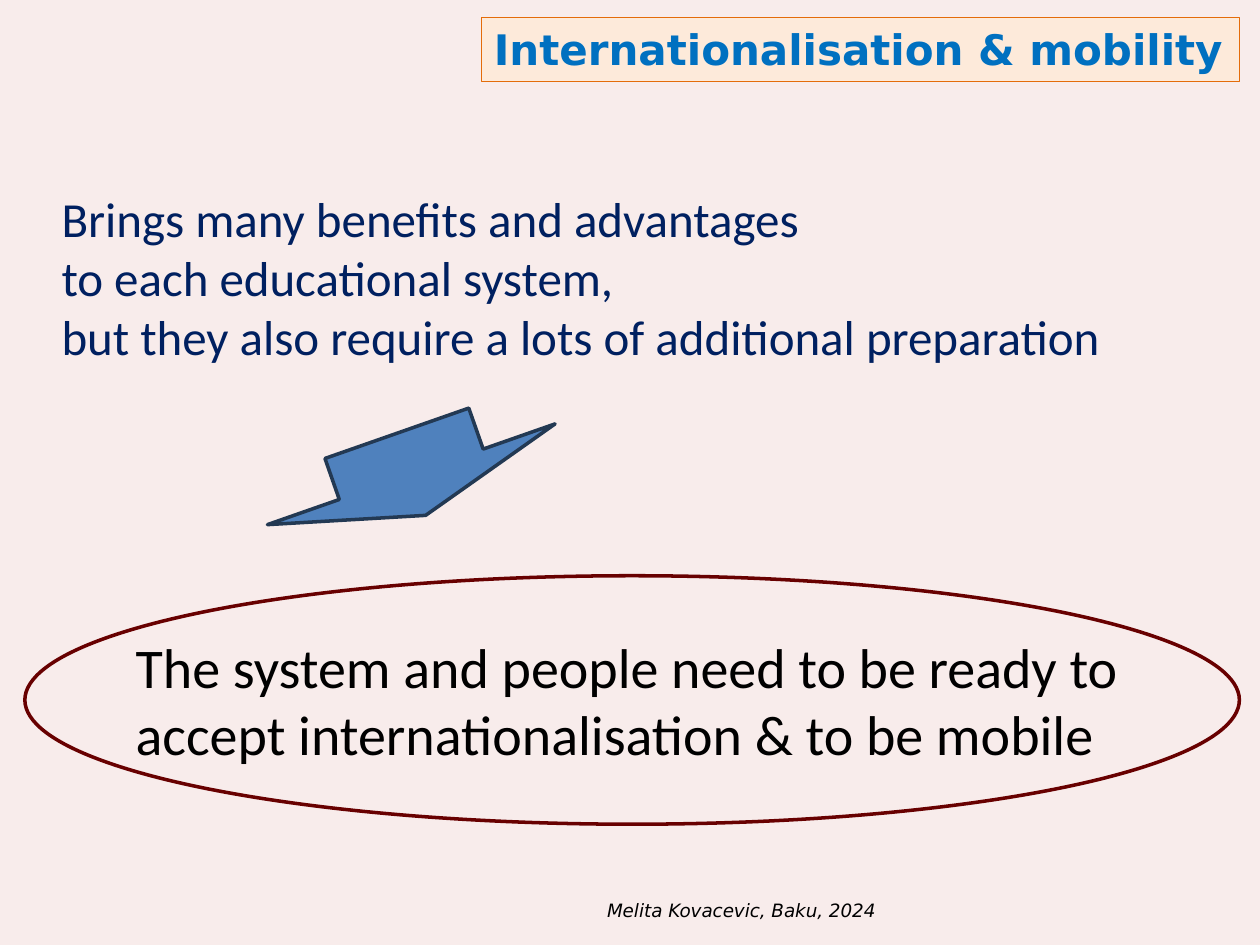
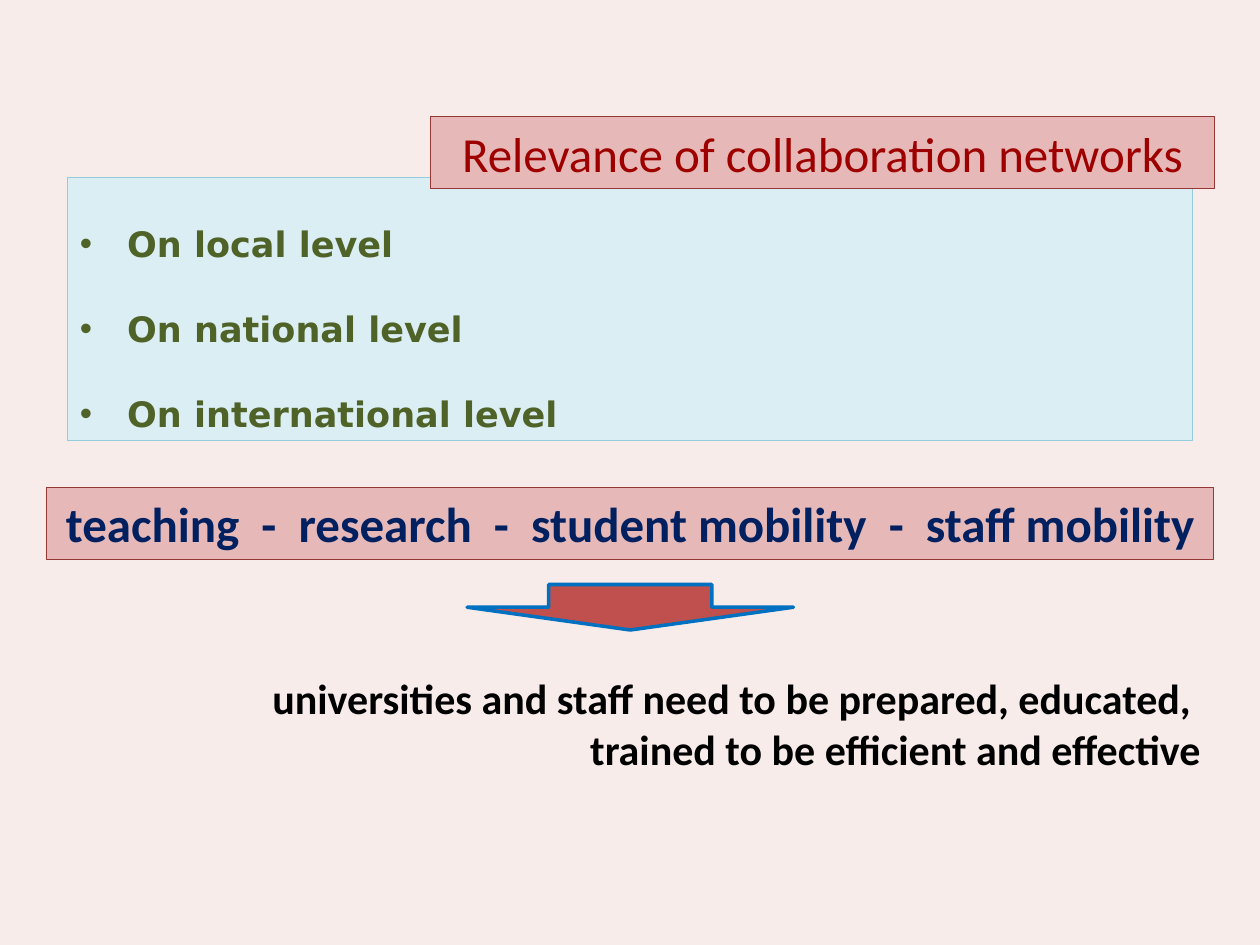
from dataclasses import dataclass

from lxml.etree import SubElement
from pptx import Presentation
from pptx.dml.color import RGBColor
from pptx.enum.shapes import MSO_SHAPE
from pptx.enum.text import MSO_ANCHOR, MSO_AUTO_SIZE, PP_ALIGN
from pptx.oxml.ns import qn
from pptx.util import Pt


@dataclass(frozen=True)
class Theme:
    # Fonts
    body_font: str = "Calibri"
    accent_font: str = "DejaVu Sans"
    # Colours
    background: str = "F8ECEB"
    navy: str = "002060"
    blue: str = "0070C0"
    black: str = "000000"
    dark_red: str = "9E0000"
    maroon: str = "680000"
    green: str = "4F6228"
    cream: str = "FDEADA"
    orange: str = "E46C0A"
    rose: str = "E6B9B8"
    rose_line: str = "953735"
    ice: str = "DBEEF4"
    ice_line: str = "93CDDD"
    arrow_blue: str = "4F81BD"
    arrow_blue_line: str = "233953"
    arrow_red: str = "C0504D"
    # Type sizes and line widths
    statement_size: float = 32
    lead_size: float = 28
    strong_size: float = 24
    bullet_size: float = 20
    footer_size: float = 10.5
    thin: float = 0.75
    thick: float = 2


THEME = Theme()


def color(value):
    return RGBColor.from_string(value)


def place(shape, box):
    shape.left, shape.top, shape.width, shape.height = (Pt(value) for value in box)


def paint(shape, fill, line, width):
    if fill:
        shape.fill.solid()
        shape.fill.fore_color.rgb = color(fill)
    else:
        shape.fill.background()
    shape.line.color.rgb = color(line)
    shape.line.width = Pt(width)


def write(shape, lines, size, text_color, font=THEME.body_font, bold=False,
          italic=False, align=PP_ALIGN.LEFT, wrap=True):
    frame = shape.text_frame
    frame.text = "\n".join(lines)
    frame.word_wrap = wrap
    frame.auto_size = MSO_AUTO_SIZE.NONE
    frame.vertical_anchor = MSO_ANCHOR.TOP
    for paragraph in frame.paragraphs:
        paragraph.alignment = align
        for run in paragraph.runs:
            run.font.name = font
            run.font.size = Pt(size)
            run.font.bold = bold
            run.font.italic = italic
            run.font.color.rgb = color(text_color)


def add_preset(slide, preset, box, fill, line, width):
    shape = slide.shapes.add_shape(preset, *(Pt(value) for value in box))
    shape.shadow.inherit = False
    paint(shape, fill, line, width)
    return shape


def add_text(slide, box, lines, size, text_color, **style):
    text_box = slide.shapes.add_textbox(*(Pt(value) for value in box))
    write(text_box, lines, size, text_color, **style)


def add_title(slide, box, text, fill, line, size, text_color, **style):
    title = slide.shapes.title
    place(title, box)
    paint(title, fill, line, THEME.thin)
    write(title, [text], size, text_color, **style)
    # Bring the title in front of what is already on the slide
    title.element.getparent().append(title.element)


def add_bullet(paragraph, indent):
    properties = paragraph._p.get_or_add_pPr()
    properties.set("marL", str(Pt(indent)))
    properties.set("indent", str(Pt(-indent)))
    SubElement(properties, qn("a:buFont")).set("typeface", "Arial")
    SubElement(properties, qn("a:buChar")).set("char", "•")


def add_level_panel(slide, box, levels):
    panel = add_preset(slide, MSO_SHAPE.RECTANGLE, box, THEME.ice, THEME.ice_line, THEME.thin)
    write(panel, levels, THEME.bullet_size, THEME.green,
          font=THEME.accent_font, bold=True)
    panel.text_frame.margin_top = Pt(25.6)
    for index, paragraph in enumerate(panel.text_frame.paragraphs):
        paragraph.space_before = Pt(24.6 if index else 0)
        add_bullet(paragraph, 27)


def add_ringed_statement(slide, box, text):
    left, top, width, height = box
    add_preset(slide, MSO_SHAPE.OVAL, box, None, THEME.maroon, THEME.thick)
    add_text(slide, (left + 56.2, top + 28.8, width - 28.8, height - 57), [text],
             THEME.statement_size, THEME.black)


def add_slide(presentation):
    slide = presentation.slides.add_slide(presentation.slide_layouts[5])
    slide.background.fill.solid()
    slide.background.fill.fore_color.rgb = color(THEME.background)
    return slide


def build_mobility_slide(presentation):
    slide = add_slide(presentation)
    add_title(slide, (275, 10, 433.5, 36.4), "Internationalisation & mobility",
              THEME.cream, THEME.orange, THEME.strong_size, THEME.blue,
              font=THEME.accent_font, bold=True)
    # Benefits and their cost
    add_text(slide, (28.1, 104.4, 665.3, 108.7),
             ["Brings many benefits and advantages",
              "to each educational system,",
              "but they also require a lots of additional preparation"],
             THEME.lead_size, THEME.navy)
    # Conclusion
    add_ringed_statement(slide, (14.2, 329, 694, 142),
                         "The system and people need to be ready to accept "
                         "internationalisation & to be mobile")
    arrow = add_preset(slide, MSO_SHAPE.DOWN_ARROW, (147.9, 246.2, 174.2, 49.7),
                       THEME.arrow_blue, THEME.arrow_blue_line, THEME.thick)
    arrow.rotation = 340.7
    # Footer
    add_text(slide, (339.8, 510.5, 171.4, 29.5), ["Melita Kovacevic, Baku, 2024"],
             THEME.footer_size, THEME.black, font=THEME.accent_font,
             italic=True, wrap=False)


def build_networks_slide(presentation):
    slide = add_slide(presentation)
    # Levels, overlapped by the title
    add_level_panel(slide, (38.6, 101.5, 643, 150.2),
                    [f"On {level} level" for level in ("local", "national", "international")])
    add_title(slide, (246, 66.7, 448, 41.2), "Relevance of collaboration networks",
              THEME.rose, THEME.rose_line, THEME.lead_size, THEME.dark_red,
              align=PP_ALIGN.CENTER, wrap=False)
    # Fields of collaboration
    band = add_preset(slide, MSO_SHAPE.RECTANGLE, (26.6, 278.7, 666.8, 41.2),
                      THEME.rose, THEME.rose_line, THEME.thin)
    write(band, ["teaching  -  research  -  student mobility  -  staff mobility"],
          THEME.lead_size, THEME.navy, bold=True, align=PP_ALIGN.CENTER, wrap=False)
    add_preset(slide, MSO_SHAPE.DOWN_ARROW, (266.9, 334, 186.5, 26),
               THEME.arrow_red, THEME.blue, THEME.thick)
    # Conclusion
    add_text(slide, (141.8, 381, 551.5, 65.4),
             ["universities and staff need to be prepared, educated, ",
              "trained to be efficient and effective"],
             THEME.strong_size, THEME.black, bold=True,
             align=PP_ALIGN.RIGHT, wrap=False)


def main():
    presentation = Presentation()
    presentation.slide_width = Pt(720)
    presentation.slide_height = Pt(540)
    build_mobility_slide(presentation)
    build_networks_slide(presentation)
    presentation.save("out.pptx")


if __name__ == "__main__":
    main()
